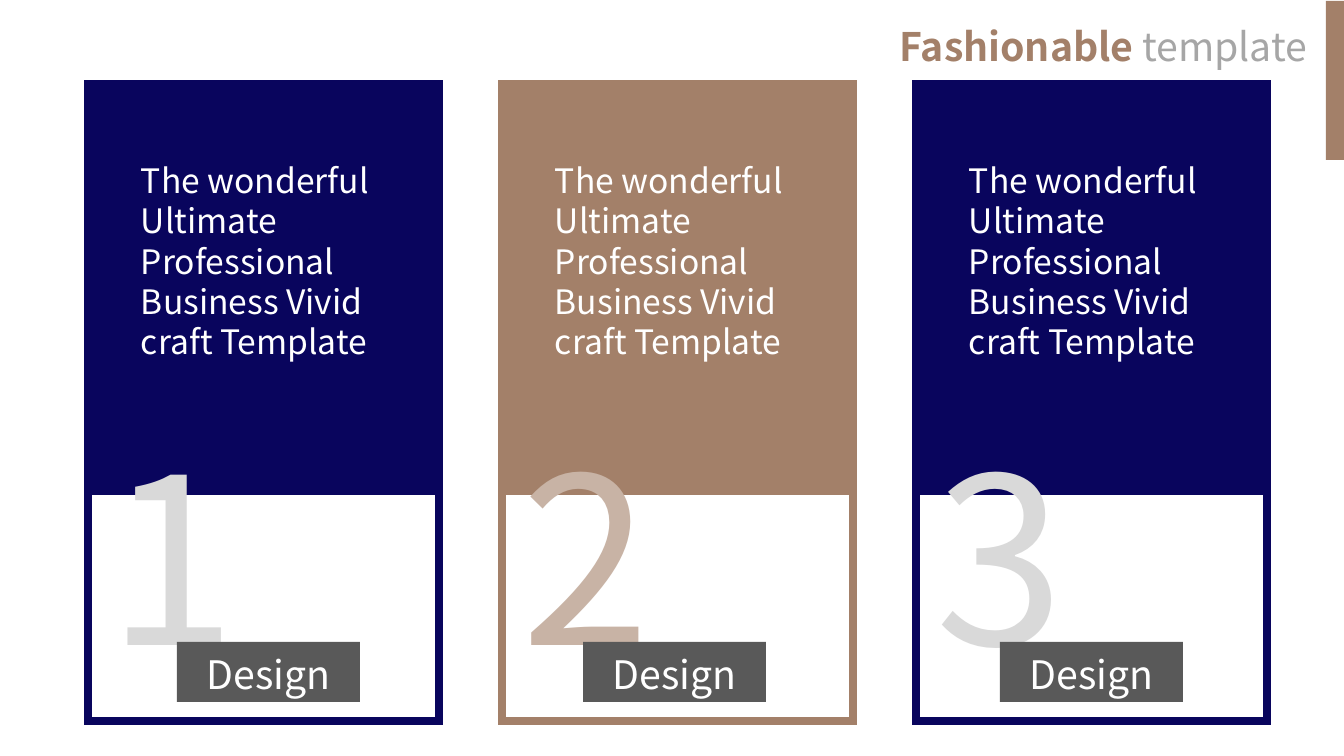
from dataclasses import dataclass

from lxml.etree import SubElement
from pptx import Presentation
from pptx.dml.color import RGBColor
from pptx.enum.shapes import MSO_SHAPE
from pptx.enum.text import MSO_ANCHOR, MSO_AUTO_SIZE, PP_ALIGN
from pptx.oxml.ns import qn
from pptx.util import Pt

PX = 9144000 / 1008


@dataclass(frozen=True)
class Theme:
    font: str = "Noto Sans CJK JP"
    navy: str = "09055D"
    brown: str = "A38069"
    pale_brown: str = "C8B3A5"
    pale_gray: str = "D9D9D9"
    light_gray: str = "A6A6A6"
    dark_gray: str = "595959"
    white: str = "FFFFFF"
    number_size: int = 166
    heading_size: int = 28
    body_size: int = 24
    border: float = 5.5


theme = Theme()
presentation = Presentation()
presentation.slide_width = round(1344 * PX)
presentation.slide_height = round(756 * PX)
slide = presentation.slides.add_slide(presentation.slide_layouts[6])


def add_rectangle(box, fill, border=None):
    shape = slide.shapes.add_shape(MSO_SHAPE.RECTANGLE, *(round(v * PX) for v in box))
    shape.shadow.inherit = False
    shape.fill.solid()
    shape.fill.fore_color.rgb = RGBColor.from_string(fill)
    if border:
        shape.line.color.rgb = RGBColor.from_string(border)
        shape.line.width = Pt(theme.border)
        # Square corners on the thick border
        line = shape.element.spPr.find(qn("a:ln"))
        SubElement(line, qn("a:miter"), lim="800000")
    else:
        shape.line.fill.background()
    return shape


def write(box, runs, size, align=PP_ALIGN.LEFT, wrap=True, shape=None):
    """Write (text, colour, bold) runs in the given shape, or in a new text box."""
    if shape is None:
        shape = slide.shapes.add_textbox(*(round(v * PX) for v in box))
    frame = shape.text_frame
    frame.word_wrap = wrap
    frame.auto_size = MSO_AUTO_SIZE.SHAPE_TO_FIT_TEXT
    paragraph = frame.paragraphs[0]
    paragraph.alignment = align
    for text, color, bold in runs:
        run = paragraph.add_run()
        run.text = text
        run.font.name = theme.font
        run.font.size = Pt(size)
        run.font.bold = bold
        run.font.color.rgb = RGBColor.from_string(color)
    return frame


cards = [
    ("1", theme.navy, theme.pale_gray, 177),
    ("2", theme.brown, theme.pale_brown, 583),
    ("3", theme.navy, theme.pale_gray, 1000),
]
body = "The wonderful Ultimate Professional Business Vivid craft Template"

for index, (number, color, number_color, tag_left) in enumerate(cards):
    left = 88 + 414 * index
    add_rectangle((left, 84, 351, 405), color, color)
    add_rectangle((left, 491, 351, 230), theme.white, color)
    write((left + 10, 408, 166, 291), [(number, number_color, False)],
          theme.number_size, wrap=False)
    write((left + 43, 155, 266, 254), [(body, theme.white, False)], theme.body_size)

    tag_box = (tag_left, 642, 183, 60)
    tag = add_rectangle(tag_box, theme.dark_gray)
    tag_frame = write(tag_box, [("Design", theme.white, False)], theme.heading_size,
                      PP_ALIGN.CENTER, shape=tag)
    tag_frame.margin_top = round(8 * PX)
    tag_frame.vertical_anchor = MSO_ANCHOR.MIDDLE

add_rectangle((1326, 1, 18, 159), theme.brown)
title_runs = [("Fashionable ", theme.brown, True), ("template", theme.light_gray, False)]
write((852, 17, 465, 57), title_runs, theme.heading_size, PP_ALIGN.RIGHT)

presentation.save("out.pptx")
